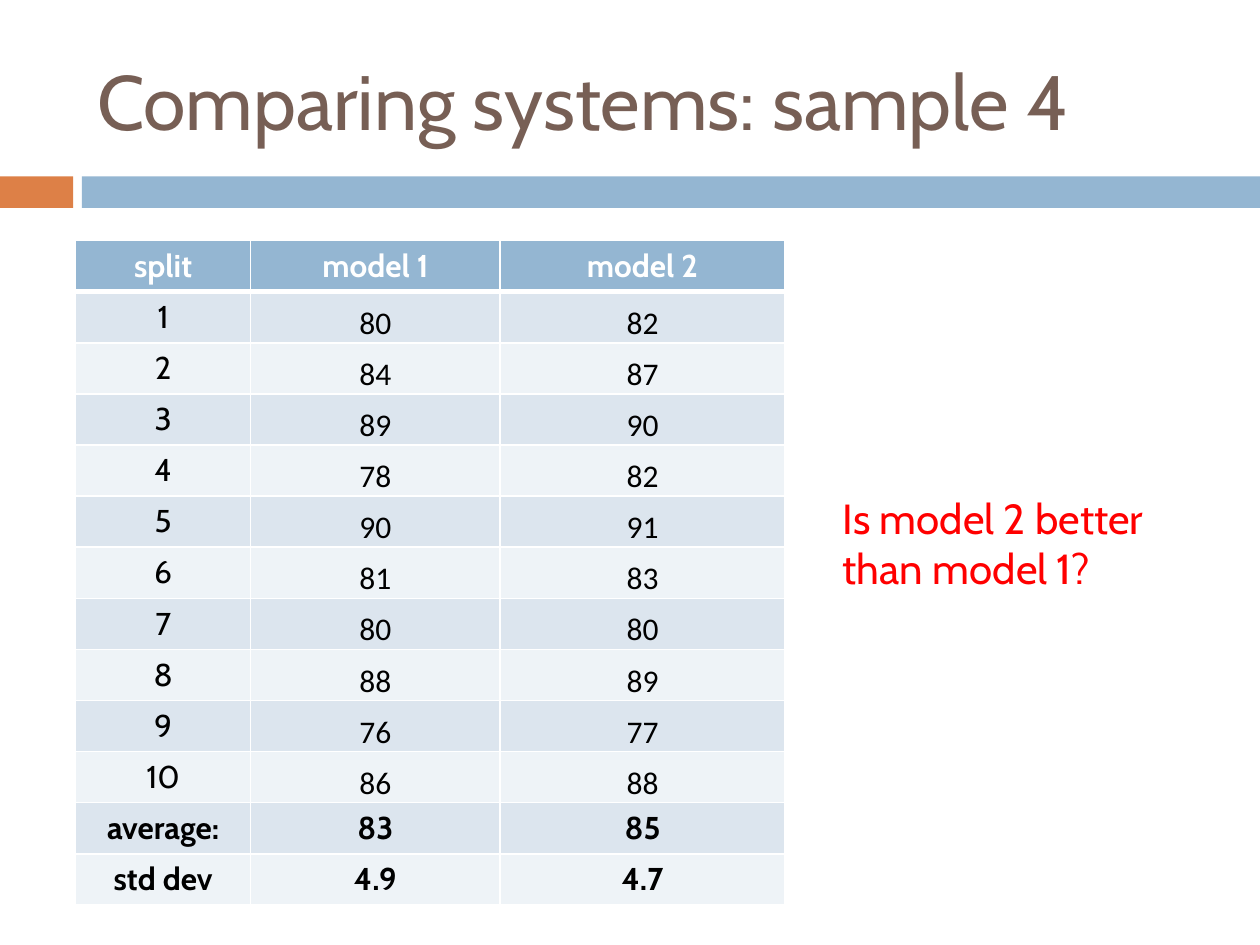
from typing import NamedTuple

from lxml import etree
from pptx import Presentation
from pptx.dml.color import RGBColor
from pptx.enum.shapes import MSO_SHAPE
from pptx.enum.text import MSO_ANCHOR, MSO_AUTO_SIZE, PP_ALIGN
from pptx.oxml.ns import qn
from pptx.util import Inches, Pt

RECTANGLE = MSO_SHAPE.RECTANGLE
MIDDLE, BOTTOM, TOP = MSO_ANCHOR.MIDDLE, MSO_ANCHOR.BOTTOM, MSO_ANCHOR.TOP
LEFT, CENTER = PP_ALIGN.LEFT, PP_ALIGN.CENTER

ORANGE = RGBColor(0xDD, 0x80, 0x47)
BLUE = RGBColor(0x94, 0xB6, 0xD2)
BROWN = RGBColor(0x77, 0x5F, 0x55)
RED = RGBColor(0xFF, 0x00, 0x00)
WHITE = RGBColor(0xFF, 0xFF, 0xFF)
BLACK = RGBColor(0x00, 0x00, 0x00)
BANDS = (RGBColor(0xDC, 0xE5, 0xEE), RGBColor(0xEE, 0xF3, 0xF7))

HEADING_FONT, NUMBER_FONT = "Cabin", "Calibri"
COLUMN_WIDTHS = (1.39, 1.98, 2.26)
ROW_HEIGHT = 0.4
THIN, THICK = 1, 3

HEADER = ("split", "model 1", "model 2")
SCORES = (
    (80, 82), (84, 87), (89, 90), (78, 82), (90, 91),
    (81, 83), (80, 80), (88, 89), (76, 77), (86, 88),
)
SUMMARY = (("average:", "83", "85"), ("std dev", "4.9", "4.7"))


class Bar(NamedTuple):
    left: float
    width: float
    color: RGBColor


class TextStyle(NamedTuple):
    size: float
    color: RGBColor
    font: str = HEADING_FONT
    bold: bool = False
    alignment: PP_ALIGN = LEFT


BARS = (Bar(0, 0.58, ORANGE), Bar(0.65, 9.35, BLUE))
TITLE_STYLE = TextStyle(44, BROWN)
QUESTION_STYLE = TextStyle(24, RED)
HEADER_STYLE = TextStyle(18, WHITE, bold=True, alignment=CENTER)
SPLIT_STYLE = TextStyle(18, BLACK, alignment=CENTER)
SCORE_STYLE = SPLIT_STYLE._replace(font=NUMBER_FONT)
SUMMARY_STYLE = SPLIT_STYLE._replace(bold=True)


def write_text(text_frame, text: str, style: TextStyle) -> None:
    text_frame.text = text
    paragraph = text_frame.paragraphs[0]
    paragraph.alignment = style.alignment
    font = paragraph.runs[0].font
    font.name = style.font
    font.size = Pt(style.size)
    font.bold = style.bold
    font.color.rgb = style.color


def add_bar(slide, bar: Bar) -> None:
    shape = slide.shapes.add_shape(
        RECTANGLE, Inches(bar.left), Inches(1.4), Inches(bar.width), Inches(0.25)
    )
    shape.shadow.inherit = False
    shape.fill.solid()
    shape.fill.fore_color.rgb = bar.color
    shape.line.fill.background()


def set_borders(cell, top: float, bottom: float) -> None:
    """Draw white cell borders; call before filling, as the schema puts lines first."""
    properties = cell._tc.get_or_add_tcPr()
    widths = {"a:lnL": THIN, "a:lnR": THIN, "a:lnT": top, "a:lnB": bottom}
    for tag, width in widths.items():
        line = etree.SubElement(properties, qn(tag), w=str(Pt(width)))
        fill = etree.SubElement(line, qn("a:solidFill"))
        etree.SubElement(fill, qn("a:srgbClr"), val=str(WHITE))


def cell_style(row: int, column: int) -> TextStyle:
    if row == 0:
        return HEADER_STYLE
    if row > len(SCORES):
        return SUMMARY_STYLE
    return SPLIT_STYLE if column == 0 else SCORE_STYLE


def format_cell(cell, text: str, row: int, column: int) -> None:
    style = cell_style(row, column)
    write_text(cell.text_frame, text, style)
    cell.vertical_anchor = TOP
    if style is SCORE_STYLE:
        cell.vertical_anchor = BOTTOM
        cell.margin_left = cell.margin_right = cell.margin_top = Inches(0.01)
        cell.margin_bottom = 0
    set_borders(
        cell,
        top=THICK if row == 1 else THIN,
        bottom=THICK if row == 0 else THIN,
    )
    cell.fill.solid()
    cell.fill.fore_color.rgb = BLUE if row == 0 else BANDS[(row - 1) % 2]


def add_score_table(slide) -> None:
    splits = [
        (str(split), *map(str, scores)) for split, scores in enumerate(SCORES, 1)
    ]
    rows = [HEADER, *splits, *SUMMARY]
    table = slide.shapes.add_table(
        len(rows), len(HEADER), Inches(0.6), Inches(1.91),
        Inches(sum(COLUMN_WIDTHS)), Inches(ROW_HEIGHT * len(rows)),
    ).table
    for column, width in zip(table.columns, COLUMN_WIDTHS):
        column.width = Inches(width)
    for row, texts in enumerate(rows):
        table.rows[row].height = Inches(ROW_HEIGHT)
        for column, text in enumerate(texts):
            format_cell(table.cell(row, column), text, row, column)


def add_title(slide) -> None:
    title = slide.shapes.title
    title.left, title.top = Inches(0.67), Inches(0.25)
    title.width, title.height = Inches(8.92), Inches(1.08)
    write_text(title.text_frame, "Comparing systems: sample 4", TITLE_STYLE)
    title.text_frame.vertical_anchor = MIDDLE


def add_question(slide) -> None:
    text_frame = slide.shapes.add_textbox(
        Inches(6.59), Inches(3.86), Inches(2.99), Inches(0.91)
    ).text_frame
    text_frame.word_wrap = True
    text_frame.auto_size = MSO_AUTO_SIZE.SHAPE_TO_FIT_TEXT
    write_text(text_frame, "Is model 2 better than model 1?", QUESTION_STYLE)


def main() -> None:
    presentation = Presentation()
    presentation.slide_width = Inches(10)
    presentation.slide_height = Inches(7.5)
    title_only = presentation.slide_layouts.get_by_name("Title Only")
    slide = presentation.slides.add_slide(title_only)
    for bar in BARS:
        add_bar(slide, bar)
    add_title(slide)
    add_score_table(slide)
    add_question(slide)
    presentation.save("out.pptx")


if __name__ == "__main__":
    main()
